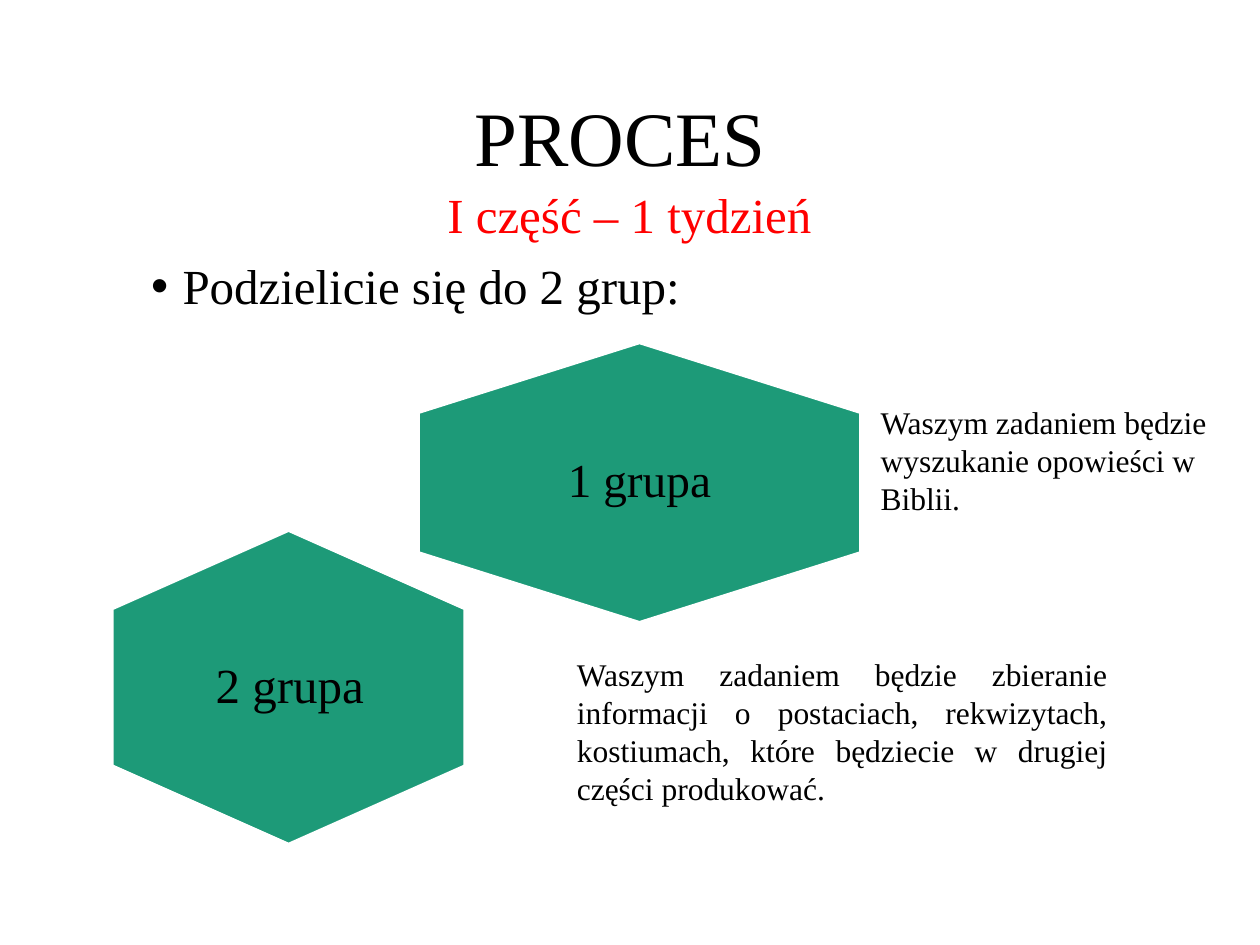
from lxml import etree
from pptx import Presentation
from pptx.dml.color import RGBColor
from pptx.enum import shapes, text
from pptx.oxml import ns
from pptx.util import Inches, Pt

BLACK = RGBColor(0x00, 0x00, 0x00)
RED = RGBColor(0xFF, 0x00, 0x00)
GREEN = RGBColor(0x1D, 0x9A, 0x78)
WHITE = RGBColor(0xFF, 0xFF, 0xFF)
FONT = "Times New Roman"

CENTER = {"alignment": text.PP_ALIGN.CENTER, "line_spacing": 0.9}
LEFT = {"alignment": text.PP_ALIGN.LEFT}
BULLET = {**LEFT, "line_spacing": 0.9, "space_before": Pt(10)}
JUSTIFY = {"alignment": text.PP_ALIGN.JUSTIFY}
MIDDLE = text.MSO_ANCHOR.MIDDLE
TOP = text.MSO_ANCHOR.TOP

HEXAGONS = [(3.97, 2.08, 2.21, 3.5), (1.05, 4.06, 2.48, 2.79)]

TEXTS = [
    ((0.69, 0.4, 8.62, 1.45), MIDDLE, None, [("PROCES ", 44, BLACK, CENTER)]),
    ((1.1, 1.47, 7.79, 1.5), TOP, None, [
        ("I część – 1 tydzień", 28, RED, CENTER),
        ("Podzielicie się do 2 grup:", 28, BLACK, BULLET),
    ]),
    ((3.91, 3.09, 2.33, 1.47), MIDDLE, 0.11, [("1 grupa", 27, BLACK, CENTER)]),
    ((1.37, 4.63, 1.86, 1.65), MIDDLE, 0, [("2 grupa", 28, BLACK, CENTER)]),
    ((4.48, 5.15, 4.41, 1.31), TOP, None, [
        ("Waszym zadaniem będzie zbieranie informacji o postaciach, rekwizytach, "
         "kostiumach, które będziecie w drugiej części produkować.", 18, BLACK, JUSTIFY),
    ]),
    ((6.89, 3.15, 3.11, 1.01), TOP, None, [
        ("Waszym zadaniem będzie wyszukanie opowieści w Biblii.", 18, BLACK, LEFT),
    ]),
]


def add_hexagon(slide, place):
    hexagon = slide.shapes.add_shape(shapes.MSO_SHAPE.HEXAGON, *map(Inches, place))
    hexagon.rotation = 90
    hexagon.adjustments[0] = 0.25
    hexagon.shadow.inherit = False
    hexagon.fill.solid()
    hexagon.fill.fore_color.rgb = GREEN
    hexagon.line.color.rgb = WHITE
    hexagon.line.width = Pt(1)


def add_bullet(paragraph):
    properties = paragraph._p.get_or_add_pPr()
    properties.set("marL", str(Inches(0.25)))
    properties.set("indent", str(-Inches(0.25)))
    etree.SubElement(properties, ns.qn("a:buFont"), typeface="Arial")
    etree.SubElement(properties, ns.qn("a:buChar"), char="•")


def add_text(slide, place, anchor, inset, lines):
    frame = slide.shapes.add_textbox(*map(Inches, place)).text_frame
    frame.word_wrap = True
    frame.vertical_anchor = anchor
    if inset is not None:
        for side in ("left", "top", "right", "bottom"):
            setattr(frame, f"margin_{side}", Inches(inset))
    for index, (words, size, color, layout) in enumerate(lines):
        paragraph = frame.add_paragraph() if index else frame.paragraphs[0]
        for name, value in layout.items():
            setattr(paragraph, name, value)
        if layout is BULLET:
            add_bullet(paragraph)
        run = paragraph.add_run()
        run.text = words
        run.font.name = FONT
        run.font.size = Pt(size)
        run.font.color.rgb = color


def main():
    deck = Presentation()
    deck.slide_width, deck.slide_height = Inches(10), Inches(7.5)
    slide = deck.slides.add_slide(deck.slide_layouts[6])
    for place in HEXAGONS:
        add_hexagon(slide, place)
    for entry in TEXTS:
        add_text(slide, *entry)
    deck.save("out.pptx")


if __name__ == "__main__":
    main()
